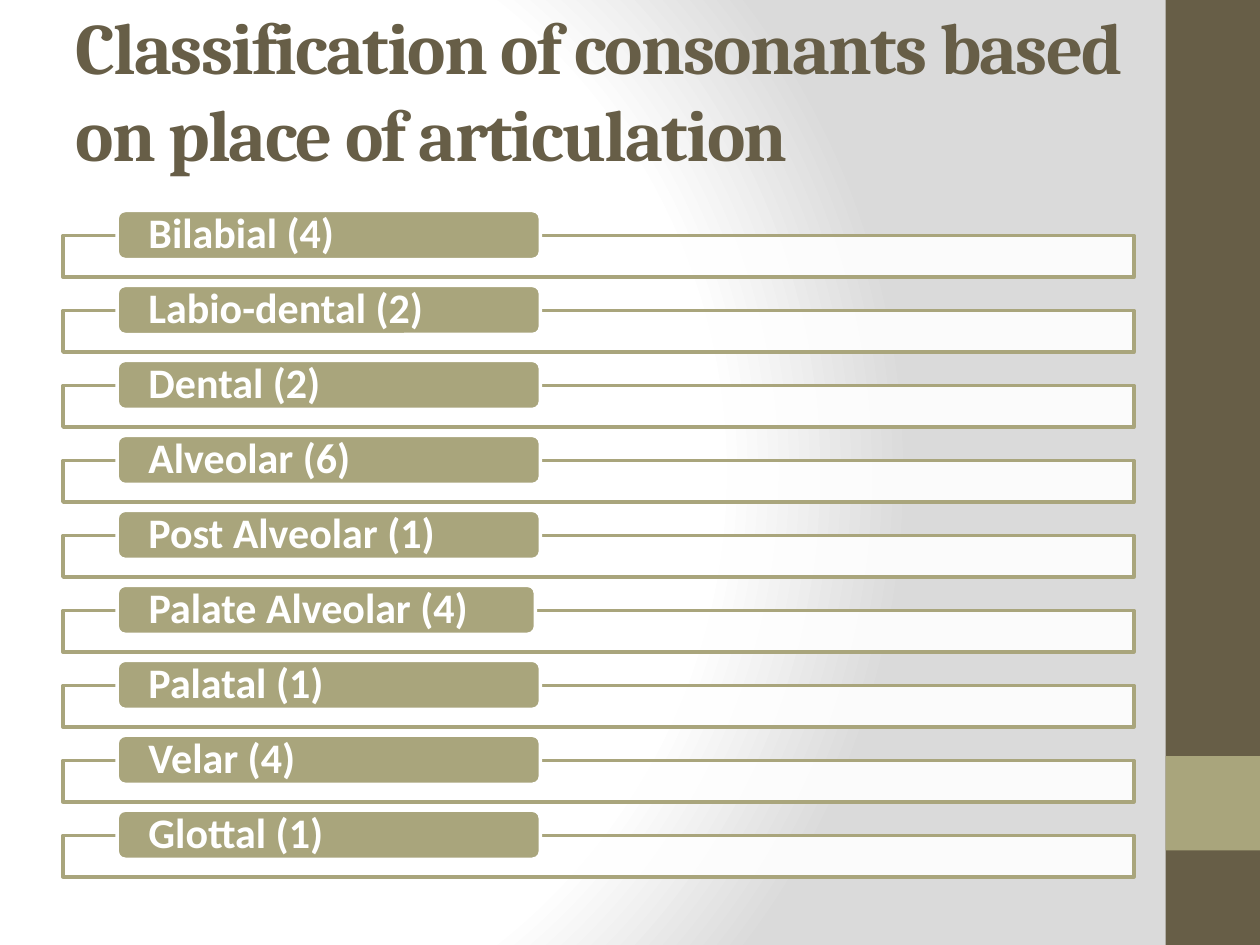
from dataclasses import dataclass

from pptx import Presentation
from pptx.dml.color import RGBColor
from pptx.enum.shapes import MSO_SHAPE as Preset
from pptx.enum.text import MSO_ANCHOR as Anchor, PP_ALIGN as Align
from pptx.oxml import parse_xml
from pptx.oxml.ns import nsdecls, qn
from pptx.slide import Slide
from pptx.util import Inches, Pt

BROWN = RGBColor(0x67, 0x5E, 0x47)
OLIVE = RGBColor(0xA9, 0xA5, 0x7C)
WHITE = RGBColor(0xFF, 0xFF, 0xFF)
GREY = RGBColor(0xDA, 0xDA, 0xDA)

COLUMNS, ROWS = 10, 7.5
FIRST_ROW, LAST_ROW = 1.87, 6.63
TAB_RISE = 0.2

PLACES = [
    ("Bilabial (4)", 3.36),
    ("Labio-dental (2)", 3.36),
    ("Dental (2)", 3.36),
    ("Alveolar (6)", 3.36),
    ("Post Alveolar (1)", 3.36),
    ("Palate Alveolar (4)", 3.32),
    ("Palatal (1)", 3.36),
    ("Velar (4)", 3.36),
    ("Glottal (1)", 3.36),
]


@dataclass
class Painter:
    slide: Slide
    cell: int = Inches(1)
    heading_font: str = "Cambria"
    body_font: str = "Calibri"

    def place(self, *cells):
        return [round(cell * self.cell) for cell in cells]

    def background(self):
        self.slide.background.fill.gradient()
        gradient = self.slide.element.find(".//" + qn("a:gradFill"))
        stops = "".join(
            f'<a:gs pos="{share * 1000}"><a:srgbClr val="{color}"/></a:gs>'
            for share, color in ((0, WHITE), (75, WHITE), (100, GREY))
        )
        radial = parse_xml(
            f'<a:gradFill {nsdecls("a")} rotWithShape="1"><a:gsLst>{stops}</a:gsLst>'
            '<a:path path="circle"><a:fillToRect l="20000" t="50000" r="100000" b="50000"/>'
            "</a:path></a:gradFill>"
        )
        gradient.getparent().replace(gradient, radial)

    def block(self, cells, fill, line=None, preset=Preset.RECTANGLE, opacity=100):
        block = self.slide.shapes.add_shape(preset, *self.place(*cells))
        block.shadow.inherit = False
        block.fill.solid()
        block.fill.fore_color.rgb = fill
        if opacity < 100:
            color = block.element.spPr.find(qn("a:solidFill"))[0]
            color.append(parse_xml(f'<a:alpha {nsdecls("a")} val="{opacity * 1000}"/>'))
        if line is None:
            block.line.fill.background()
        else:
            block.line.color.rgb = line
            block.line.width = Pt(2)
        return block

    def lettering(self, frame, text, font, size, color):
        frame.text = text
        frame.word_wrap = True
        frame.vertical_anchor = Anchor.MIDDLE
        paragraph = frame.paragraphs[0]
        paragraph.alignment = Align.LEFT
        run = paragraph.runs[0]
        run.font.name = font
        run.font.size = Pt(size)
        run.font.bold = True
        run.font.color.rgb = color
        return paragraph

    def title(self, cells, text):
        title = self.slide.shapes.add_textbox(*self.place(*cells))
        self.lettering(title.text_frame, text, self.heading_font, 41.4, BROWN)
        title.element.find(".//" + qn("a:rPr")).set("spc", "-100")

    def tab(self, cells, text):
        tab = self.block(cells, OLIVE, WHITE, Preset.ROUNDED_RECTANGLE)
        frame = tab.text_frame
        frame.margin_left = frame.margin_right = Inches(0.23)
        frame.margin_top = frame.margin_bottom = 0
        paragraph = self.lettering(frame, text, self.body_font, 24, WHITE)
        paragraph.line_spacing = 0.9


def main():
    deck = Presentation()
    deck.slide_width, deck.slide_height = Inches(COLUMNS), Inches(ROWS)
    painter = Painter(deck.slides.add_slide(deck.slide_layouts[6]))

    painter.background()
    painter.block((9.25, 0, 0.75, ROWS), BROWN)
    painter.block((9.25, 6, 0.75, 0.75), OLIVE)
    painter.title(
        (0.5, 0.08, 9, 1.25),
        "Classification of consonants based on place of articulation",
    )

    pitch = (LAST_ROW - FIRST_ROW) / (len(PLACES) - 1)
    for index, (place, tab_width) in enumerate(PLACES):
        top = FIRST_ROW + index * pitch
        painter.block((0.5, top, 8.5, 0.33), WHITE, OLIVE, opacity=90)
        painter.tab((0.93, top - TAB_RISE, tab_width, 0.39), place)

    deck.save("out.pptx")


if __name__ == "__main__":
    main()
